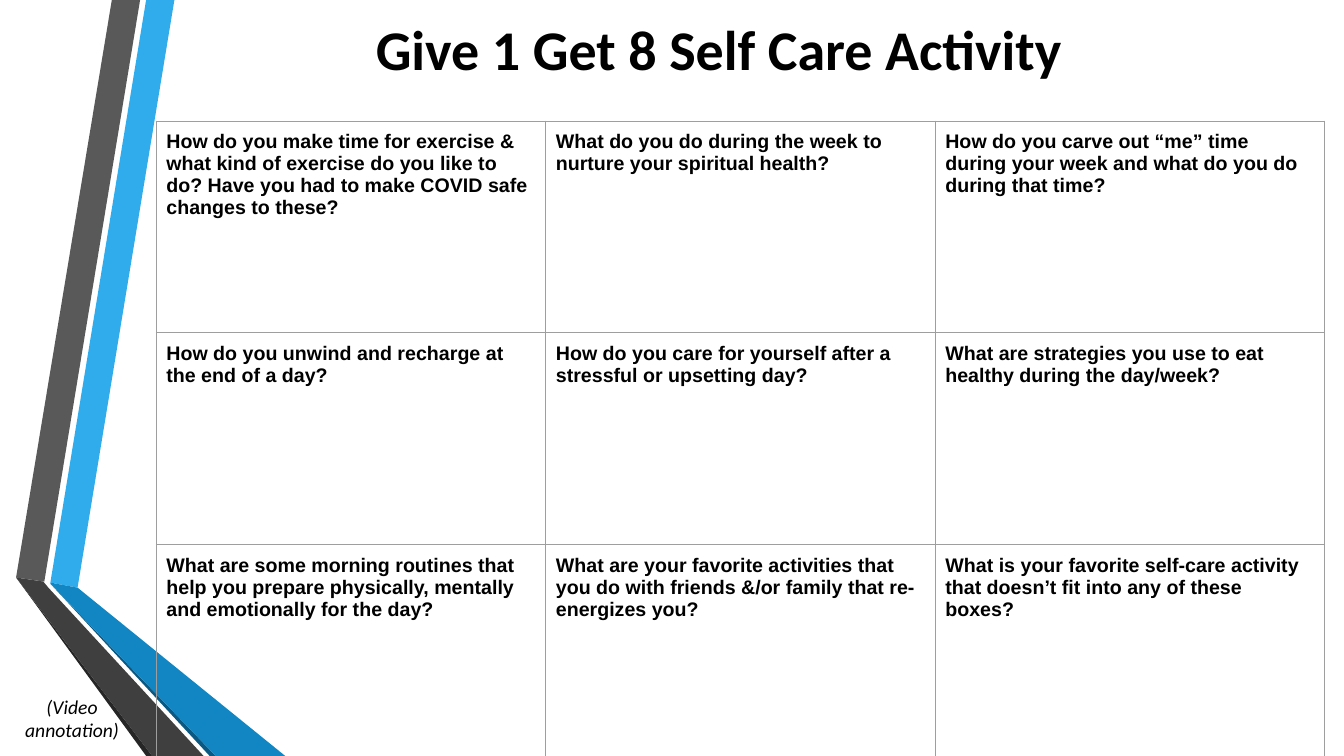
"""Build the self care activity slide with a three by three question grid."""
from lxml.etree import SubElement
from pptx import Presentation
from pptx.dml.color import RGBColor
from pptx.enum.text import MSO_ANCHOR, PP_ALIGN
from pptx.oxml.ns import qn
from pptx.util import Inches, Pt

BLACK = RGBColor(0x00, 0x00, 0x00)
LIGHT_BLUE = RGBColor(0x30, 0xAC, 0xEC)
BLUE = RGBColor(0x11, 0x86, 0xC3)
DARK_BLUE = RGBColor(0x0B, 0x59, 0x82)
GRAY = RGBColor(0x59, 0x59, 0x59)
DARK_GRAY = RGBColor(0x3F, 0x3F, 0x3F)
CHARCOAL = RGBColor(0x26, 0x26, 0x26)
BORDER_GRAY = RGBColor(0x9E, 0x9E, 0x9E)

RIBBONS = [
    (LIGHT_BLUE, [(0.5, 5.78), (0.77, 5.83), (1.73, 0), (1.45, 0)]),
    (GRAY, [(1.39, 0), (1.11, 0), (0.16, 5.73), (0.44, 5.77)]),
    (CHARCOAL, [(0.16, 5.73), (1.45, 7.5), (1.51, 7.5)]),
    (DARK_BLUE, [(0.5, 5.79), (2.08, 7.5), (2.14, 7.5)]),
    (BLUE, [(0.5, 5.79), (2.14, 7.5), (2.83, 7.5), (0.77, 5.83), (0.5, 5.78)]),
    (DARK_GRAY, [(2.02, 7.5), (0.48, 5.83), (0.43, 5.77), (0.16, 5.73), (1.51, 7.5)]),
]
QUESTIONS = [
    [
        "How do you make time for exercise & what kind of exercise do you like to do? "
        "Have you had to make COVID safe changes to these?",
        "What do you do during the week to nurture your spiritual health?",
        "How do you carve out “me” time during your week and what do you do during that time?",
    ],
    [
        "How do you unwind and recharge at the end of a day?",
        "How do you care for yourself after a stressful or upsetting day?",
        "What are strategies you use to eat healthy during the day/week?",
    ],
    [
        "What are some morning routines that help you prepare physically, mentally "
        "and emotionally for the day?",
        "What are your favorite activities that you do with friends &/or family "
        "that re-energizes you?",
        "What is your favorite self-care activity that doesn’t fit into any of these boxes?",
    ],
]


def style_font(font, name, size):
    font.name = name
    font.size = Pt(size)
    font.color.rgb = BLACK


def add_centered_text(text, left, top, width, height, size, inset):
    box = slide.shapes.add_textbox(Inches(left), Inches(top), Inches(width), Inches(height))
    frame = box.text_frame
    frame.word_wrap = True
    frame.vertical_anchor = MSO_ANCHOR.TOP
    frame.margin_left = frame.margin_right = Inches(0.1)
    frame.margin_top = frame.margin_bottom = Inches(inset)
    paragraph = frame.paragraphs[0]
    paragraph.text = text
    paragraph.alignment = PP_ALIGN.CENTER
    style_font(paragraph.font, "Calibri", size)
    return paragraph


presentation = Presentation()
presentation.slide_width = Inches(13.33)
presentation.slide_height = Inches(7.5)
slide = presentation.slides.add_slide(presentation.slide_layouts[6])

for color, points in RIBBONS:
    corners = [(Inches(x), Inches(y)) for x, y in points]
    builder = slide.shapes.build_freeform(*corners[0])
    builder.add_line_segments(corners[1:], close=True)
    ribbon = builder.convert_to_shape()
    ribbon.shadow.inherit = False
    ribbon.fill.solid()
    ribbon.fill.fore_color.rgb = color
    ribbon.line.fill.background()

title = add_centered_text("Give 1 Get 8 Self Care Activity", 1.65, 0.1, 10.96, 1.24, 40, 0.05)
title.font.bold = True

table = slide.shapes.add_table(
    3, 3, Inches(1.55), Inches(1.2), Inches(11.59), Inches(6.3)
).table
table.first_row = False
table.horz_banding = False
for row, row_questions in enumerate(QUESTIONS):
    for column, question in enumerate(row_questions):
        cell = table.cell(row, column)
        cell.margin_left = cell.margin_right = Inches(0.1)
        cell.margin_top = cell.margin_bottom = Inches(0.1)
        properties = cell._tc.get_or_add_tcPr()
        for side in ("a:lnL", "a:lnR", "a:lnT", "a:lnB"):
            border = SubElement(properties, qn(side), w=str(Pt(0.75)))
            border_fill = SubElement(border, qn("a:solidFill"))
            SubElement(border_fill, qn("a:srgbClr"), val=str(BORDER_GRAY))
        cell.fill.background()
        paragraph = cell.text_frame.paragraphs[0]
        paragraph.text = question
        style_font(paragraph.font, "Arial", 14)
        paragraph.font.bold = True

note = add_centered_text("(Video annotation)", 0.08, 6.79, 1.27, 0.64, 14, 0.1)
note.font.italic = True

presentation.save("out.pptx")
